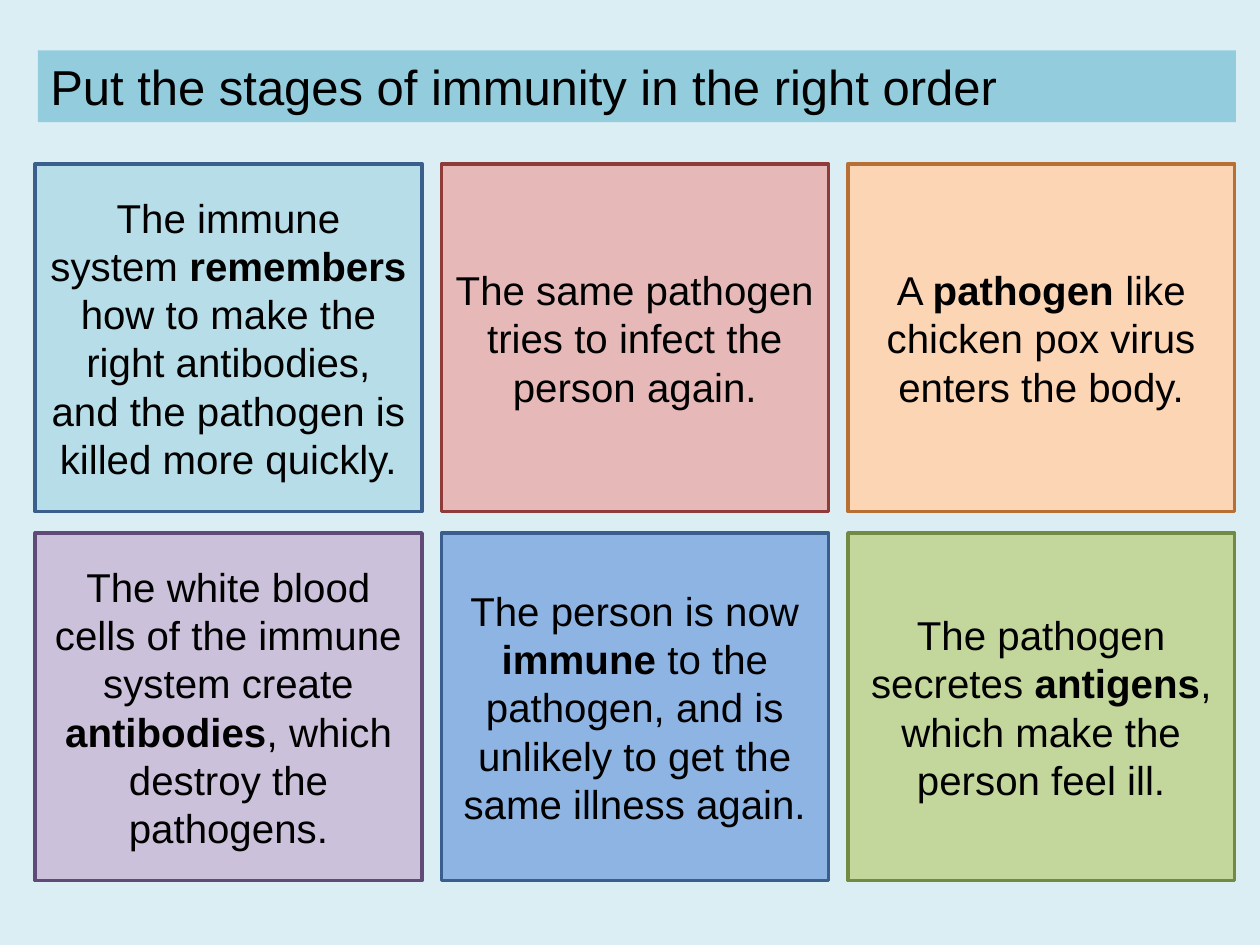
"""Build a slide of six immunity stage cards to be put in order."""
from dataclasses import dataclass

from pptx import Presentation
from pptx.dml.color import RGBColor
from pptx.enum.shapes import MSO_SHAPE
from pptx.enum.text import MSO_ANCHOR, MSO_AUTO_SIZE, PP_ALIGN
from pptx.util import Inches, Pt

FONT = "Arial"
INK = "000000"
GRID_LEFT, GRID_TOP = 0.28, 1.3
CARD_WIDTH, CARD_HEIGHT = 3.07, 2.76
COLUMN_GAP, ROW_GAP = 0.155, 0.17


@dataclass(frozen=True)
class Stage:
    column: int
    row: int
    fill: str
    border: str
    before: str
    keyword: str = ""
    after: str = ""


STAGES = [
    Stage(0, 0, "B7DEE8", "3A5F8C", "The immune system ", "remembers",
          " how to make the right antibodies, and the pathogen is killed more quickly."),
    Stage(1, 0, "E6B9B8", "8E3B39", "The same pathogen tries to infect the person again."),
    Stage(2, 0, "FCD5B5", "B76F34", "A ", "pathogen",
          " like chicken pox virus enters the body."),
    Stage(0, 1, "CCC1DA", "5F4A78", "The white blood cells of the immune system create ",
          "antibodies", ", which destroy the pathogens."),
    Stage(1, 1, "8EB4E3", "3A5F8C", "The person is now ", "immune",
          " to the pathogen, and is unlikely to get the same illness again."),
    Stage(2, 1, "C3D69B", "738A42", "The pathogen secretes ", "antigens",
          ", which make the person feel ill."),
]


def paint(color_owner, hex_color: str) -> None:
    if hasattr(color_owner, "solid"):
        color_owner.solid()
        color_owner.fore_color.rgb = RGBColor.from_string(hex_color)
    else:
        color_owner.color.rgb = RGBColor.from_string(hex_color)


def style_run(run, size: float, bold: bool = False) -> None:
    run.font.name = FONT
    run.font.size = Pt(size)
    run.font.bold = bold
    paint(run.font, INK)


def place_title(slide, wording: str) -> None:
    title = slide.shapes.title
    title.left, title.top = Inches(0.3), Inches(0.4)
    title.width, title.height = Inches(9.51), Inches(0.57)
    paint(title.fill, "93CDDD")
    frame = title.text_frame
    frame.text = wording
    frame.word_wrap = True
    frame.auto_size = MSO_AUTO_SIZE.NONE
    frame.vertical_anchor = MSO_ANCHOR.MIDDLE
    frame.paragraphs[0].alignment = PP_ALIGN.LEFT
    style_run(frame.paragraphs[0].runs[0], 28)


def draw_stage(slide, stage: Stage) -> None:
    card = slide.shapes.add_shape(
        MSO_SHAPE.RECTANGLE,
        Inches(GRID_LEFT + stage.column * (CARD_WIDTH + COLUMN_GAP)),
        Inches(GRID_TOP + stage.row * (CARD_HEIGHT + ROW_GAP)),
        Inches(CARD_WIDTH), Inches(CARD_HEIGHT))
    card.shadow.inherit = False
    paint(card.fill, stage.fill)
    paint(card.line, stage.border)
    card.line.width = Pt(2)
    frame = card.text_frame
    frame.word_wrap = True
    frame.vertical_anchor = MSO_ANCHOR.MIDDLE
    sentence = frame.paragraphs[0]
    sentence.alignment = PP_ALIGN.CENTER
    for wording in filter(None, (stage.before, stage.keyword, stage.after)):
        run = sentence.add_run()
        run.text = wording
        style_run(run, 23, bold=wording == stage.keyword)


def main() -> None:
    deck = Presentation()
    deck.slide_width, deck.slide_height = Inches(10), Inches(7.5)
    slide = deck.slides.add_slide(deck.slide_layouts[5])
    paint(slide.background.fill, "DBEEF4")
    place_title(slide, "Put the stages of immunity in the right order")
    for stage in STAGES:
        draw_stage(slide, stage)
    deck.save("out.pptx")


if __name__ == "__main__":
    main()
